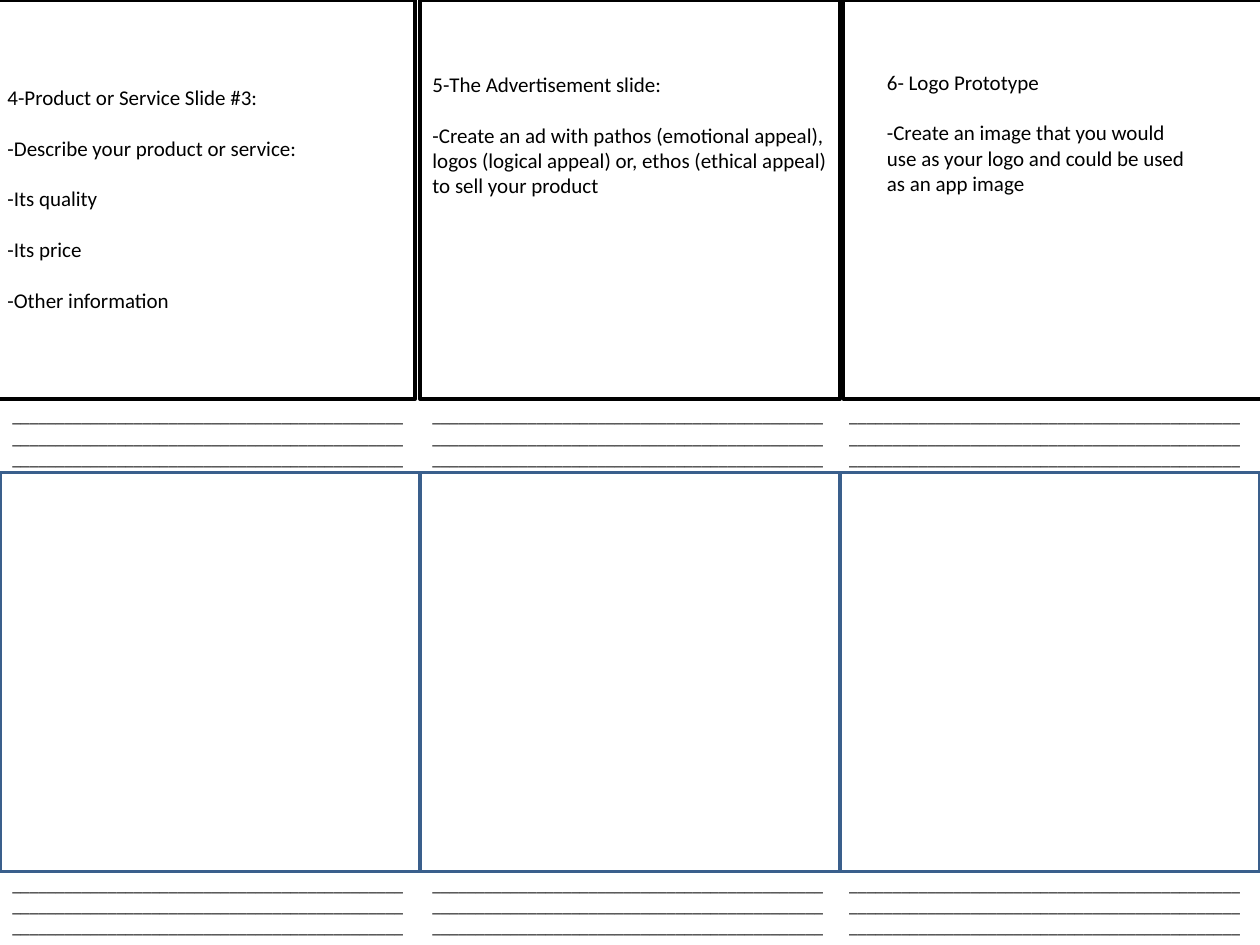
from dataclasses import dataclass
from itertools import product

from pptx import Presentation
from pptx.dml.color import RGBColor
from pptx.enum.shapes import MSO_SHAPE
from pptx.enum.text import MSO_ANCHOR as Anchor, MSO_AUTO_SIZE as AutoSize, PP_ALIGN as Align
from pptx.util import Cm, Pt


@dataclass(frozen=True)
class Theme:
    font: str = "Calibri"
    ink: RGBColor = RGBColor(0x00, 0x00, 0x00)
    paper: RGBColor = RGBColor(0xFF, 0xFF, 0xFF)
    blue: RGBColor = RGBColor(0x3A, 0x5F, 0x8C)
    body_size: Pt = Pt(12)
    rule_size: Pt = Pt(10)
    paragraph_gap: Pt = Pt(14.65)
    border: Pt = Pt(2)


class Storyboard:
    def __init__(self, slide, theme):
        self.slide = slide
        self.theme = theme

    def fill_text(self, frame, lines, size, gap=Pt(0)):
        frame.text = "\n".join(lines)
        for index, paragraph in enumerate(frame.paragraphs):
            paragraph.alignment = Align.LEFT
            if index and gap:
                paragraph.space_before = gap
            for run in paragraph.runs:
                run.font.name = self.theme.font
                run.font.size = size
                run.font.color.rgb = self.theme.ink

    def panel(self, left, top, border_color):
        panel = self.slide.shapes.add_shape(
            MSO_SHAPE.RECTANGLE, Cm(left), Cm(top), Cm(PANEL_WIDTH), Cm(PANEL_HEIGHT))
        panel.shadow.inherit = False
        panel.fill.solid()
        panel.fill.fore_color.rgb = self.theme.paper
        panel.line.color.rgb = border_color
        panel.line.width = self.theme.border
        return panel

    def prompt_panel(self, left, prompt, text_top):
        frame = self.panel(left, 0, self.theme.ink).text_frame
        if prompt:
            frame.word_wrap = True
            frame.vertical_anchor = Anchor.TOP
            frame.margin_top = Cm(text_top)
            self.fill_text(frame, prompt, self.theme.body_size, self.theme.paragraph_gap)

    def text_box(self, left, top, width, height, lines, size, gap=Pt(0), wrap=True):
        frame = self.slide.shapes.add_textbox(
            Cm(left), Cm(top), Cm(width), Cm(height)).text_frame
        frame.word_wrap = wrap
        frame.auto_size = AutoSize.SHAPE_TO_FIT_TEXT
        self.fill_text(frame, lines, size, gap)

    def writing_lines(self, left, top):
        self.text_box(left, top, 8.53, 1.55, ["_" * 45] * 3,
                      self.theme.rule_size, wrap=False)


SLIDE_WIDTH, SLIDE_HEIGHT = 25.4, 19.05
PANEL_WIDTH, PANEL_HEIGHT = SLIDE_WIDTH / 3, 8.05
SKETCH_TOP = SLIDE_HEIGHT / 2

PRODUCT = [
    "4-Product or Service Slide #3:",
    "-Describe your product or service:",
    "-Its quality",
    "-Its price",
    "-Other information",
]
ADVERTISEMENT = [
    "5-The Advertisement slide:",
    "-Create an ad with pathos (emotional appeal), logos (logical appeal) or, "
    "ethos (ethical appeal) to sell your product",
]
LOGO = [
    "6- Logo Prototype",
    "-Create an image that you would use as your logo and could be used as an app image",
]


def main():
    presentation = Presentation()
    presentation.slide_width = Cm(SLIDE_WIDTH)
    presentation.slide_height = Cm(SLIDE_HEIGHT)
    theme = Theme()
    board = Storyboard(
        presentation.slides.add_slide(presentation.slide_layouts[6]), theme)

    for column in range(3):
        board.panel(column * PANEL_WIDTH, SKETCH_TOP, theme.blue)
    for top, left in product((8.05, 17.5), (0, PANEL_WIDTH, 16.87)):
        board.writing_lines(left, top)
    for left, prompt, text_top in (
        (-0.1, PRODUCT, 1.7),
        (PANEL_WIDTH, ADVERTISEMENT, 1.44),
        (17, None, 0),
    ):
        board.prompt_panel(left, prompt, text_top)
    board.text_box(17.63, 1.27, 6.73, 2.82, LOGO, theme.body_size, theme.paragraph_gap)

    presentation.save("out.pptx")


if __name__ == "__main__":
    main()
